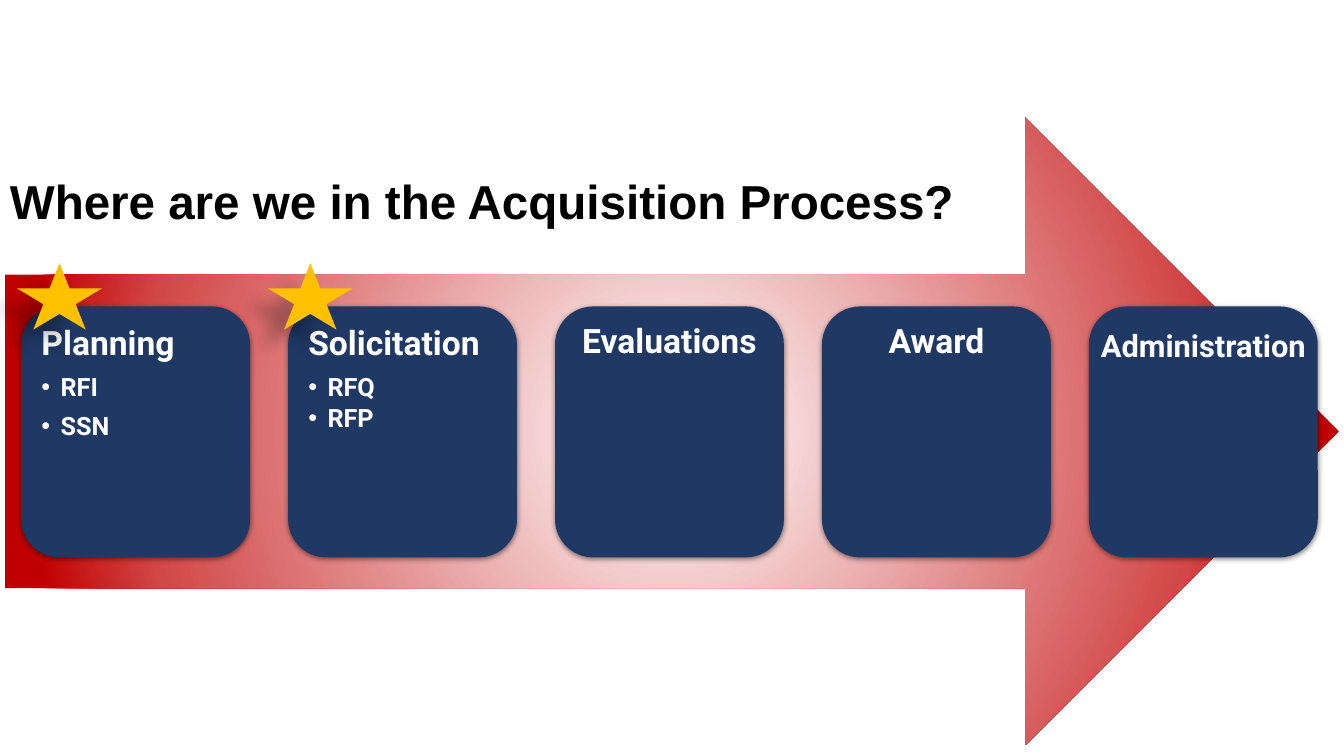
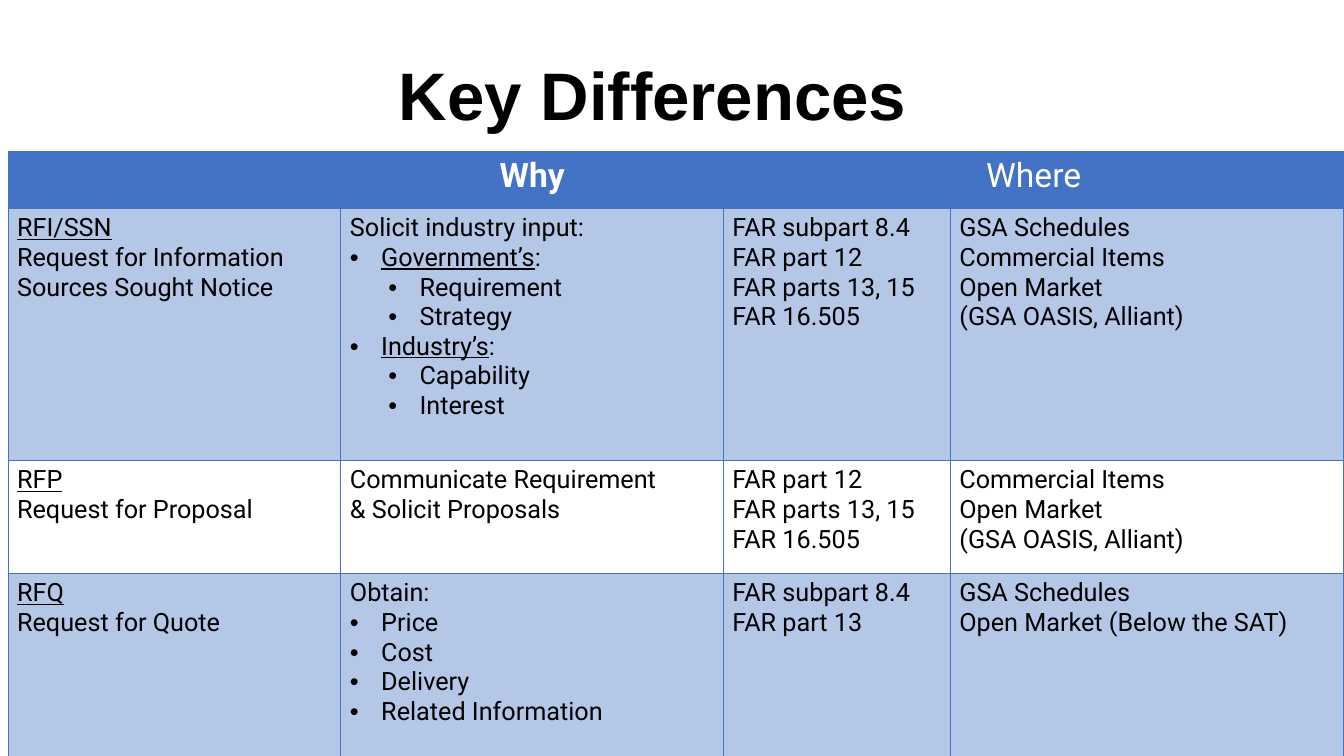
from dataclasses import dataclass
from itertools import accumulate
from pptx import Presentation
from pptx.dml.color import RGBColor
from pptx.enum.shapes import MSO_SHAPE
from pptx.enum.text import MSO_ANCHOR, PP_ALIGN
from pptx.oxml import parse_xml
from pptx.oxml.ns import qn
from pptx.util import Emu, Inches, Pt

# Shared look
NAVY, RED, ROSE, GOLD = "1F3864", "C00000", "D24848", "FFC000"
BLUE, PALE, WHITE, BLACK = "4472C4", "B4C7E7", "FFFFFF", "000000"
TITLE_FONT, BODY_FONT = "Arial", "Roboto"
NAMESPACE = 'xmlns:a="http://schemas.openxmlformats.org/drawingml/2006/main"'


@dataclass
class Box:
    left: float
    top: float
    width: float
    height: float

    def inner(self, left, top, width, height):
        """Return an inner box, given in percent of this one."""
        return Box(self.left + self.width * left / 100,
                   self.top + self.height * top / 100,
                   self.width * width / 100, self.height * height / 100)

    def place(self):
        return [Inches(v) for v in (self.left, self.top, self.width, self.height)]


@dataclass
class Line:
    text: str
    underlined: str = ""   # leading words that carry an underline
    indent: float = 0      # text start of a bulleted line, in inches
    hang: float = 0.31     # distance from bullet to text
    size: float = 18
    before: float = 0


SLIDE = Box(0, 0, 13.33, 7.5)


def color(value):
    return RGBColor.from_string(value)


def element(markup):
    return parse_xml(markup.replace(" ", f" {NAMESPACE} ", 1))


def add_bullet(para, indent, hang):
    properties = para._p.get_or_add_pPr()
    properties.set("marL", str(Inches(indent)))
    properties.set("indent", str(-Inches(hang)))
    properties.append(element('<a:buFont typeface="Arial"/>'))
    properties.append(element('<a:buChar char="•"/>'))


def write(frame, lines, ink=BLACK, font=BODY_FONT, bold=False,
          align=PP_ALIGN.LEFT, spacing=1.0):
    """Fill a text frame with one paragraph for each line."""
    frame.word_wrap = True
    for index, line in enumerate(lines):
        para = frame.add_paragraph() if index else frame.paragraphs[0]
        para.alignment, para.line_spacing = align, spacing
        if index:
            para.space_before = Pt(line.before)
        if line.indent:
            add_bullet(para, line.indent, line.hang)
        for words, underline in ((line.underlined, True), (line.text, False)):
            if words:
                span = para.add_run()
                span.text = words
                span.font.name, span.font.size = font, Pt(line.size)
                span.font.bold, span.font.underline = bold, underline
                span.font.color.rgb = color(ink)


def set_margins(frame, side, top):
    frame.margin_left = frame.margin_right = Inches(side)
    frame.margin_top = frame.margin_bottom = Inches(top)


def add_title(page, box, text, size, align=PP_ALIGN.LEFT):
    frame = page.shapes.add_textbox(*box.place()).text_frame
    set_margins(frame, 0.1, 0.1)
    frame.vertical_anchor = MSO_ANCHOR.MIDDLE
    write(frame, [Line(text, size=size)], font=TITLE_FONT, bold=True, align=align)


def add_figure(page, kind, box, fill, shadow=None):
    """Add a preset shape; shadow is (opacity %, blur pt, distance pt, angle)."""
    shape = page.shapes.add_shape(kind, *box.place())
    shape.fill.solid()
    shape.fill.fore_color.rgb = color(fill)
    shape.line.fill.background()
    shape.shadow.inherit = False
    if shadow:
        opacity, blur, distance, angle = shadow
        shape._element.spPr.find(qn("a:effectLst")).append(element(
            f'<a:outerShdw blurRad="{Pt(blur)}" dist="{Pt(distance)}" '
            f'dir="{angle * 60000}" algn="ctr" rotWithShape="0">'
            f'<a:srgbClr val="{BLACK}"><a:alpha val="{opacity * 1000}"/>'
            '</a:srgbClr></a:outerShdw>'))
    return shape


# Process slide
def add_arrow(page, box):
    arrow = add_figure(page, MSO_SHAPE.RIGHT_ARROW, box, RED)
    stops = "".join(f'<a:gs pos="{share * 1000}"><a:srgbClr val="{tone}"/></a:gs>'
                    for share, tone in ((0, WHITE), (72, ROSE), (88, RED), (100, RED)))
    properties = arrow._element.spPr
    properties.replace(properties.find(qn("a:solidFill")), element(
        f'<a:gradFill rotWithShape="1"><a:gsLst>{stops}</a:gsLst><a:path path="circle">'
        '<a:fillToRect l="50000" t="50000" r="50000" b="50000"/></a:path></a:gradFill>'))


def add_phase(page, box, lines, align, side, top, star_left):
    card = add_figure(page, MSO_SHAPE.ROUNDED_RECTANGLE, box, NAVY, (49, 4, 1, 90))
    card.text_frame.vertical_anchor = MSO_ANCHOR.TOP
    set_margins(card.text_frame, side, top)
    write(card.text_frame, lines, ink=WHITE, bold=True, align=align, spacing=0.9)
    if star_left is not None:
        add_figure(page, MSO_SHAPE.STAR_5_POINT,
                   box.inner(star_left, -17.27, 37, 26.51), GOLD, (27, 11.8, 19.7, 141))


def phase_item(text, before=8.4):
    return Line(text, indent=0.19, hang=0.19, before=before)


# Lines, alignment, side margin, top margin, star offset
PHASES = [
    ([Line("Planning", size=24), phase_item("RFI"), phase_item("SSN")],
     PP_ALIGN.LEFT, 0.09, 0.09, -1.76),
    ([Line("Solicitation", size=24), phase_item("RFQ"), phase_item("RFP", 2.7)],
     PP_ALIGN.LEFT, 0.09, 0.09, -8.81),
    ([Line("Evaluations", size=24)], PP_ALIGN.CENTER, 0.07, 0.07, None),
    ([Line("Award", size=24)], PP_ALIGN.CENTER, 0.07, 0.07, None),
    ([Line("Administration", size=22)], PP_ALIGN.CENTER, 0, 0.13, None),
]


def build_process(page):
    add_title(page, SLIDE.inner(0, 21.33, 75.08, 10.27),
              "Where are we in the Acquisition Process?", 34)
    add_arrow(page, SLIDE.inner(0.38, 15.6, 99.25, 82.93))
    for index, phase in enumerate(PHASES):
        add_phase(page, SLIDE.inner(1.58 + 19.86 * index, 40.53, 17.03, 33.2), *phase)


# Comparison slide
def plain(*texts):
    return [Line(text) for text in texts]


def bullets(*texts, indent=0.31):
    return [Line(text, indent=indent) for text in texts]


def topic(name, *details):
    return [Line(":", name, indent=0.31), *bullets(*details, indent=0.69)]


def request(code, *names):
    return [Line("", code), *plain(*names)]


COLUMNS = [24.92, 28.63, 16.99, 29.46]
ROWS = [9.48, 41.6, 18.64, 30.28]
HEADINGS = [("", False), ("Why", True), ("Where", False)]
REQUESTS = [
    [request("RFI/SSN", "Request for Information", "Sources Sought Notice"),
     plain("Solicit industry input:")
     + topic("Government’s", "Requirement", "Strategy")
     + topic("Industry’s", "Capability", "Interest"),
     plain("FAR subpart 8.4", "FAR part 12", "FAR parts 13, 15", "FAR 16.505"),
     plain("GSA Schedules", "Commercial Items", "Open Market", "(GSA OASIS, Alliant)")],
    [request("RFP", "Request for Proposal"),
     plain("Communicate Requirement", "& Solicit Proposals"),
     plain("FAR part 12", "FAR parts 13, 15", "FAR 16.505"),
     plain("Commercial Items", "Open Market", "(GSA OASIS, Alliant)")],
    [request("RFQ", "Request for Quote"),
     plain("Obtain:") + bullets("Price", "Cost", "Delivery", "Related Information"),
     plain("FAR subpart 8.4", "FAR part 13"),
     plain("GSA Schedules", "Open Market (Below the SAT)")],
]


def share_out(total, shares):
    """Split a length by percent without rounding gaps."""
    edges = [0, *(round(total * mark / 100) for mark in accumulate(shares))]
    return [Emu(end - start) for start, end in zip(edges, edges[1:])]


def style_cell(cell, fill):
    set_margins(cell, 0.09, 0.05)
    cell.fill.solid()
    cell.fill.fore_color.rgb = color(fill)
    for index, side in enumerate("LRTB"):
        cell._tc.get_or_add_tcPr().insert(index, element(
            f'<a:ln{side} w="{Pt(0.75)}"><a:solidFill><a:srgbClr val="{BLUE}"/>'
            f'</a:solidFill></a:ln{side}>'))


def add_comparison(page, box):
    table = page.shapes.add_table(len(ROWS), len(COLUMNS), *box.place()).table
    for column, width in zip(table.columns, share_out(Inches(box.width), COLUMNS)):
        column.width = width
    for row, height in zip(table.rows, share_out(Inches(box.height), ROWS)):
        row.height = height
    # Heading row, its last heading over two columns
    for column in range(len(COLUMNS)):
        style_cell(table.cell(0, column), BLUE)
    table.cell(0, 2).merge(table.cell(0, 3))
    for column, (heading, bold) in enumerate(HEADINGS):
        write(table.cell(0, column).text_frame, [Line(heading, size=24)],
              ink=WHITE, bold=bold, align=PP_ALIGN.CENTER)
    # Banded body rows
    for row, entries in enumerate(REQUESTS, 1):
        for column, lines in enumerate(entries):
            cell = table.cell(row, column)
            style_cell(cell, PALE if row % 2 else WHITE)
            write(cell.text_frame, lines)


def build_differences(page):
    add_title(page, SLIDE.inner(0.6, 5.6, 95.92, 13.47), "Key Differences", 48,
              PP_ALIGN.CENTER)
    add_comparison(page, SLIDE.inner(0.6, 20, 99.4, 80.13))


def main():
    deck = Presentation()
    deck.slide_width, deck.slide_height = Inches(SLIDE.width), Inches(SLIDE.height)
    for build in (build_process, build_differences):
        build(deck.slides.add_slide(deck.slide_layouts[6]))
    deck.save("out.pptx")


if __name__ == "__main__":
    main()
